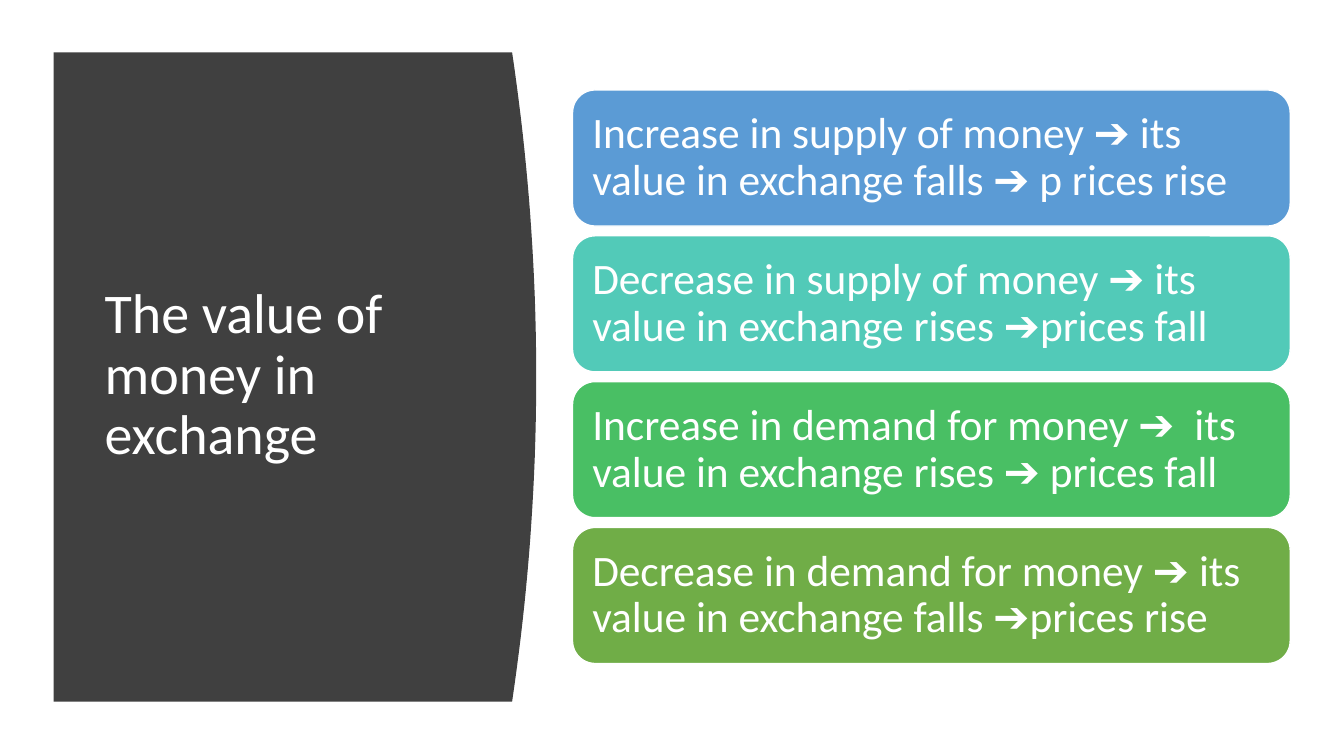
import pptx
import pptx.dml.color
import pptx.enum.shapes
import pptx.enum.text
import pptx.util
from dataclasses import dataclass
from typing import NamedTuple


@dataclass(frozen=True)
class Theme:
    """Colours, font and type sizes of the deck."""
    font: str = "Calibri"
    light: str = "FFFFFF"
    panel: str = "404040"
    cards: tuple = ("5B9BD5", "52CAB8", "49BF64", "70AD47")
    title_size: int = 40
    card_size: int = 31
    line_spacing: float = 0.9


class Box(NamedTuple):
    """A rectangle in EMU."""
    left: int
    top: int
    width: int
    height: int

    def inner(self, left, top, width, height):
        """Return the box covering the given shares of this one."""
        return Box(int(self.left + left * self.width), int(self.top + top * self.height),
                   int(width * self.width), int(height * self.height))


THEME = Theme()
PAGE = Box(0, 0, pptx.util.Inches(13.33), pptx.util.Inches(7.5))
GRID = 100
CURVE_STEPS = 40
STATEMENTS = (
    "Increase in supply of money ➔ its value in exchange falls ➔ p rices rise",
    "Decrease in supply of money ➔ its value in exchange rises ➔prices fall",
    "Increase in demand for money ➔  its value in exchange rises ➔ prices fall",
    "Decrease in demand for money ➔ its value in exchange falls ➔prices rise",
)


def grid_box(column, row, columns, rows):
    """Return the page box at the given grid columns and rows."""
    return PAGE.inner(column / GRID, row / GRID, columns / GRID, rows / GRID)


def color(value):
    """Return an RGB colour from its hex value."""
    return pptx.dml.color.RGBColor.from_string(value)


def write_text(shape, text, *, size, inset=(0.1, 0.05)):
    """Write one left-aligned, vertically centred paragraph into a shape."""
    frame = shape.text_frame
    frame.word_wrap = True
    frame.vertical_anchor = pptx.enum.text.MSO_ANCHOR.MIDDLE
    frame.margin_left = frame.margin_right = pptx.util.Inches(inset[0])
    frame.margin_top = frame.margin_bottom = pptx.util.Inches(inset[1])
    para = frame.paragraphs[0]
    para.alignment = pptx.enum.text.PP_ALIGN.LEFT
    para.line_spacing = THEME.line_spacing
    span = para.add_run()
    span.text = text
    span.font.name = THEME.font
    span.font.size = pptx.util.Pt(size)
    span.font.color.rgb = color(THEME.light)


def add_title_panel(page, box, title):
    """Draw the dark panel with its bulging right edge and the title."""
    straight = 0.95
    bulge = 1 - straight
    steps = [step / CURVE_STEPS for step in range(CURVE_STEPS + 1)]
    edge = [(box.left + box.width * (straight + bulge * 4 * share * (1 - share)),
             box.top + box.height * share) for share in steps]
    outline = page.shapes.build_freeform(box.left, box.top)
    outline.add_line_segments(edge + [(box.left, box.top + box.height)], close=True)
    panel = outline.convert_to_shape()
    panel.shadow.inherit = False
    panel.fill.solid()
    panel.fill.fore_color.rgb = color(THEME.panel)
    panel.line.fill.background()
    heading = page.shapes.add_textbox(*box.inner(0.085, 0.092, 0.78, 0.814))
    write_text(heading, title, size=THEME.title_size)


def add_card(page, box, text, fill):
    """Draw one rounded card holding a statement."""
    card = page.shapes.add_shape(pptx.enum.shapes.MSO_SHAPE.ROUNDED_RECTANGLE, *box)
    card.shadow.inherit = False
    card.fill.solid()
    card.fill.fore_color.rgb = color(fill)
    card.line.color.rgb = color(THEME.light)
    card.line.width = pptx.util.Pt(1)
    write_text(card, text, size=THEME.card_size, inset=(0.13, 0.13))


def add_card_stack(page, box, statements):
    """Stack equal cards with equal gaps in the box."""
    gap = 0.017
    height = (1 - gap * (len(statements) - 1)) / len(statements)
    for index, (text, fill) in enumerate(zip(statements, THEME.cards)):
        add_card(page, box.inner(0, index * (height + gap), 1, height), text, fill)


def main():
    """Build the deck and save it."""
    deck = pptx.Presentation()
    deck.slide_width, deck.slide_height = PAGE.width, PAGE.height
    page = deck.slides.add_slide(deck.slide_layouts[6])
    add_title_panel(page, grid_box(4, 6.93, 35.9, 85.87), "The value of money in exchange")
    add_card_stack(page, grid_box(42.6, 11.9, 53.4, 75.87), STATEMENTS)
    deck.save("out.pptx")


if __name__ == "__main__":
    main()
